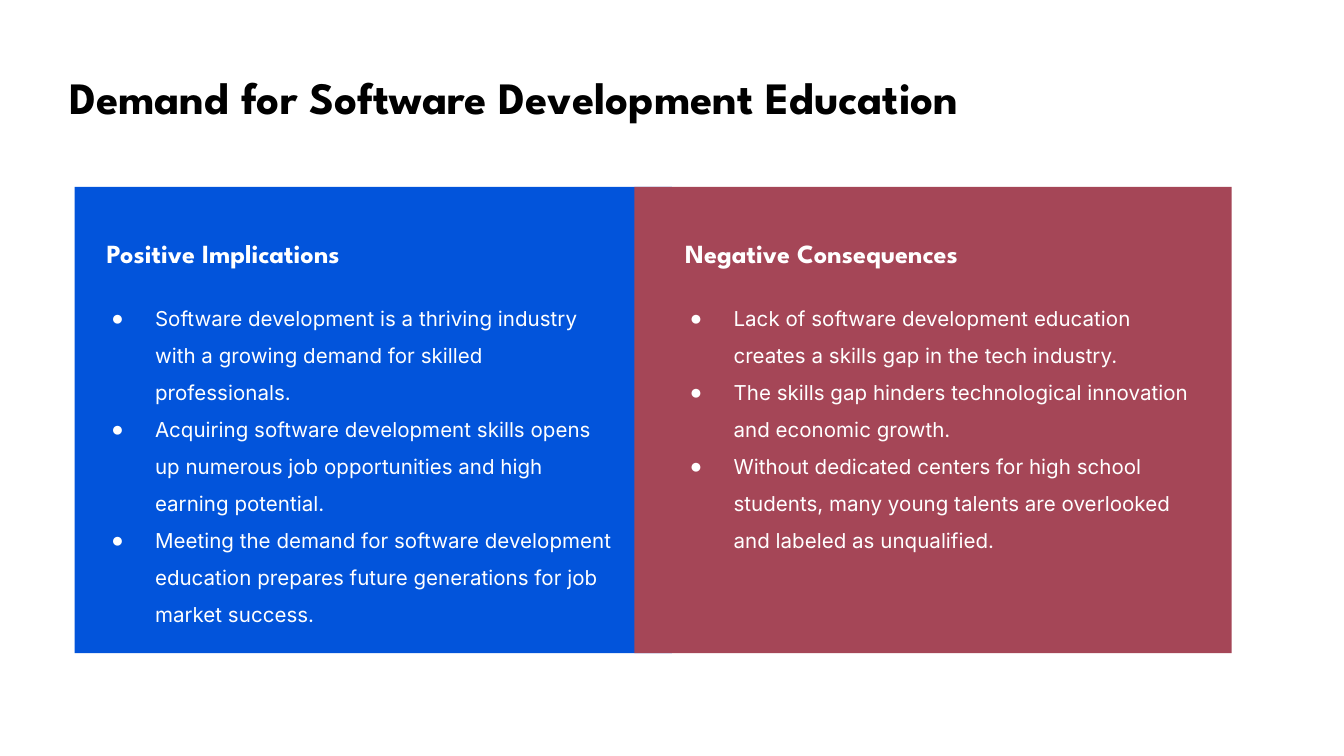
"""Builds a slide that sets the gains and costs of software education side by side."""
from lxml.etree import SubElement
from pptx import Presentation
from pptx.dml.color import RGBColor
from pptx.enum.shapes import MSO_SHAPE as Shape
from pptx.enum.text import MSO_ANCHOR as Anchor, MSO_AUTO_SIZE as Fit, PP_ALIGN as Align
from pptx.oxml.ns import qn
from pptx.util import Pt

PX = 4572
HUES = {"ink": "000000", "paper": "FFFFFF", "blue": "0254DB", "red": "A54657"}
HEAD, BODY = "League Spartan", "Inter"


def scale(*sizes):
    return [size * PX for size in sizes]


def write(box, *lines, font=HEAD, size=14, hue="paper", bold=False, dots=False):
    frame = box.text_frame
    frame.word_wrap = True
    frame.auto_size = Fit.NONE
    frame.vertical_anchor = Anchor.TOP
    frame.margin_left = frame.margin_right = 20 * PX
    frame.margin_top = frame.margin_bottom = 20 * PX
    for i, line in enumerate(lines):
        para = frame.add_paragraph() if i else frame.paragraphs[0]
        para.alignment = Align.LEFT
        if dots:
            para.line_spacing = 1.5
            props = para._p.get_or_add_pPr()
            props.set("marL", str(100 * PX))
            props.set("indent", str(-65 * PX))
            tint = SubElement(props, qn("a:buClr"))
            SubElement(tint, qn("a:srgbClr"), val=HUES[hue])
            SubElement(props, qn("a:buFont"), typeface="Arial")
            SubElement(props, qn("a:buChar"), char="●")
        run = para.add_run()
        run.text = line
        run.font.name = font
        run.font.size = Pt(size)
        run.font.bold = bold
        run.font.color.rgb = RGBColor.from_string(HUES[hue])


deck = Presentation()
deck.slide_width, deck.slide_height = scale(2000, 1125)
slide = deck.slides.add_slide(deck.slide_layouts[5])
shapes = slide.shapes

title = shapes.title
title.left, title.top, title.width, title.height = scale(83, 84, 1806, 100)
write(title, "Demand for Software Development Education", size=24, hue="ink", bold=True)

sides = [
    ("blue", 111, 139, 111, "Positive Implications", [
        "Software development is a thriving industry with a growing demand for skilled professionals.",
        "Acquiring software development skills opens up numerous job opportunities and high earning potential.",
        "Meeting the demand for software development education prepares future generations for job market success.",
    ]),
    ("red", 944, 1000, 972, "Negative Consequences", [
        "Lack of software development education creates a skills gap in the tech industry.",
        "The skills gap hinders technological innovation and economic growth.",
        "Without dedicated centers for high school students, many young talents are overlooked "
        "and labeled as unqualified.",
    ]),
]

for hue, left, head_x, list_x, head, points in sides:
    panel = shapes.add_shape(Shape.RECTANGLE, *scale(left, 278, 889, 694))
    panel.shadow.inherit = False
    panel.fill.solid()
    panel.fill.fore_color.rgb = RGBColor.from_string(HUES[hue])
    panel.line.fill.background()
    write(shapes.add_textbox(*scale(head_x, 334, 833, 100)), head, bold=True)
    write(shapes.add_textbox(*scale(list_x, 417, 833, 472)), *points, font=BODY, size=11, dots=True)

deck.save("out.pptx")
